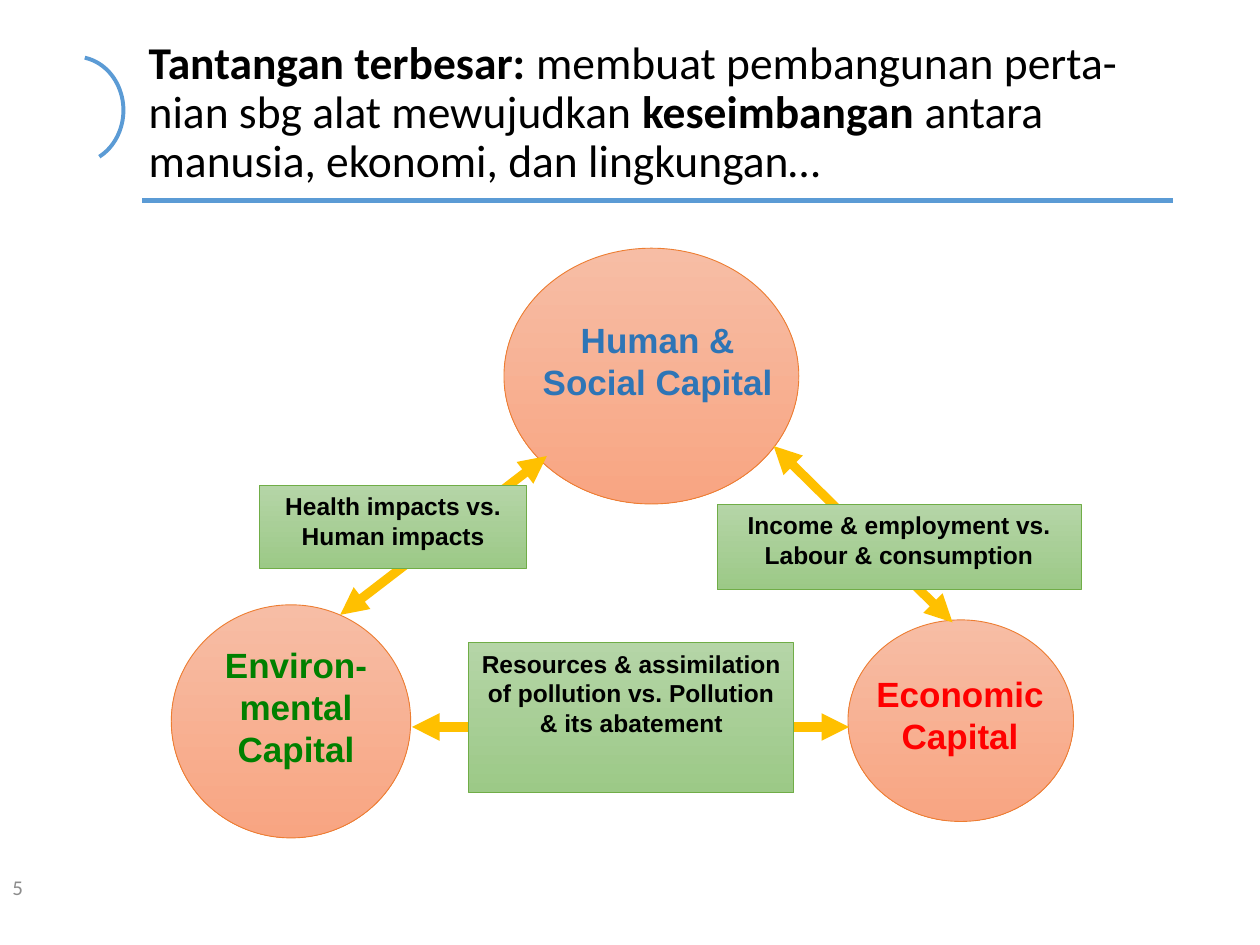
from typing import NamedTuple

from lxml import etree
from pptx import Presentation
from pptx.dml.color import RGBColor
from pptx.enum.shapes import MSO_CONNECTOR, MSO_SHAPE
from pptx.enum.text import MSO_ANCHOR, MSO_AUTO_SIZE, PP_ALIGN
from pptx.oxml.ns import qn
from pptx.util import Inches, Pt

STRAIGHT = MSO_CONNECTOR.STRAIGHT
ARC, OVAL, RECTANGLE = MSO_SHAPE.ARC, MSO_SHAPE.OVAL, MSO_SHAPE.RECTANGLE
TOP, MIDDLE = MSO_ANCHOR.TOP, MSO_ANCHOR.MIDDLE
LEFT, CENTER = PP_ALIGN.LEFT, PP_ALIGN.CENTER
NO_AUTOFIT = MSO_AUTO_SIZE.NONE

BLACK = RGBColor(0x00, 0x00, 0x00)
GRAY = RGBColor(0x8C, 0x8C, 0x8C)
BLUE = RGBColor(0x5B, 0x9B, 0xD5)
DARK_BLUE = RGBColor(0x2E, 0x75, 0xB6)
DARK_GREEN = RGBColor(0x00, 0x80, 0x00)
RED = RGBColor(0xFF, 0x00, 0x00)
GOLD = RGBColor(0xFF, 0xC0, 0x00)
ORANGE = RGBColor(0xED, 0x7D, 0x31)
ORANGE_TOP = RGBColor(0xF7, 0xBD, 0xA5)
ORANGE_BOTTOM = RGBColor(0xF8, 0xA5, 0x82)
GREEN = RGBColor(0x70, 0xAD, 0x47)
GREEN_TOP = RGBColor(0xB5, 0xD5, 0xA7)
GREEN_BOTTOM = RGBColor(0x9C, 0xC9, 0x87)


class Box(NamedTuple):
    left: float
    top: float
    width: float
    height: float

    def lengths(self):
        return [Inches(value) for value in self]


class Capital(NamedTuple):
    circle: Box
    label: Box
    lines: list[str]
    color: RGBColor


class Impact(NamedTuple):
    box: Box
    text: str


class Link(NamedTuple):
    start: tuple[float, float]
    end: tuple[float, float]


CAPITALS = [
    Capital(Box(4, 1.97, 2.34, 2.03), Box(4.04, 2.48, 2.36, 1.16),
            ["Human &", "Social Capital"], DARK_BLUE),
    Capital(Box(1.36, 4.8, 1.9, 1.85), Box(1.45, 5.06, 1.8, 1.27),
            ["Environ-mental", "Capital"], DARK_GREEN),
    Capital(Box(6.73, 4.92, 1.79, 1.6), Box(6.72, 5.29, 1.8, 0.96),
            ["Economic Capital"], RED),
]
LINKS = [
    Link((2.7, 4.88), (4.34, 3.62)),
    Link((6.14, 3.54), (7.56, 4.94)),
    Link((3.27, 5.77), (6.74, 5.77)),
]
IMPACTS = [
    Impact(Box(2.06, 3.85, 2.12, 0.66), "Health impacts vs. Human impacts"),
    Impact(Box(5.69, 4, 2.89, 0.68), "Income & employment vs. Labour & consumption"),
    Impact(Box(3.72, 5.1, 2.58, 1.19),
           "Resources & assimilation of pollution vs. Pollution & its abatement"),
]
TITLE_RUNS = [
    ("Tantangan terbesar: ", True),
    ("membuat pembangunan perta-nian sbg alat mewujudkan ", False),
    ("keseimbangan ", True),
    ("antara manusia, ekonomi, dan lingkungan…", False),
]


def write_lines(shape, lines: list[str], size: float, color: RGBColor,
                font: str = "Arial", bold: bool = True, align=CENTER, anchor=TOP):
    frame = shape.text_frame
    frame.word_wrap = True
    frame.vertical_anchor = anchor
    frame.text = "\n".join(lines)
    for paragraph in frame.paragraphs:
        paragraph.alignment = align
        paragraph.font.name = font
        paragraph.font.size = Pt(size)
        paragraph.font.bold = bold
        paragraph.font.color.rgb = color


def add_gradient_shape(slide, kind, box: Box, top: RGBColor, bottom: RGBColor,
                       outline: RGBColor):
    shape = slide.shapes.add_shape(kind, *box.lengths())
    shape.shadow.inherit = False
    shape.fill.gradient()
    shape.fill.gradient_angle = 270
    for stop, color in zip(shape.fill.gradient_stops, (top, bottom)):
        stop.color.rgb = color
    shape.line.color.rgb = outline
    shape.line.width = Pt(0.5)
    return shape


def add_line(slide, link: Link, color: RGBColor, width: float, arrows: bool = False):
    points = [Inches(value) for value in link.start + link.end]
    connector = slide.shapes.add_connector(STRAIGHT, *points)
    connector.line.color.rgb = color
    connector.line.width = Pt(width)
    if arrows:
        line = connector.line._get_or_add_ln()
        for end in ("a:headEnd", "a:tailEnd"):
            etree.SubElement(line, qn(end), type="triangle")
    etree.SubElement(connector._element.spPr, qn("a:effectLst"))


def add_title(slide):
    title = slide.shapes.title
    title.left, title.top, title.width, title.height = Box(1.08, 0.43, 8.5, 0.94).lengths()
    frame = title.text_frame
    frame.word_wrap = True
    frame.auto_size = NO_AUTOFIT
    frame.vertical_anchor = MIDDLE
    paragraph = frame.paragraphs[0]
    paragraph.alignment = LEFT
    paragraph.line_spacing = 0.9
    paragraph.font.name = "Calibri"
    paragraph.font.size = Pt(26)
    paragraph.font.color.rgb = BLACK
    for text, bold in TITLE_RUNS:
        run = paragraph.add_run()
        run.text = text
        run.font.bold = bold


def main():
    presentation = Presentation()
    presentation.slide_width = Inches(10)
    presentation.slide_height = Inches(7.5)
    slide = presentation.slides.add_slide(presentation.slide_layouts[5])

    # Title with its arc and rule
    arc = slide.shapes.add_shape(ARC, *Box(0.22, 0.45, 0.76, 0.85).lengths())
    arc.adjustments[0] = 167.99
    arc.adjustments[1] = 37.74
    arc.shadow.inherit = False
    arc.fill.background()
    arc.line.color.rgb = BLUE
    arc.line.width = Pt(2.25)
    add_line(slide, Link((1.13, 1.59), (9.31, 1.59)), BLUE, 3)
    add_title(slide)

    # Three capitals
    for capital in CAPITALS:
        add_gradient_shape(slide, OVAL, capital.circle, ORANGE_TOP, ORANGE_BOTTOM, ORANGE)
        label = slide.shapes.add_textbox(*capital.label.lengths())
        write_lines(label, capital.lines, 20, capital.color)

    # Two-way links, partly covered by the impact boxes
    for link in LINKS:
        add_line(slide, link, GOLD, 5.25, arrows=True)
    for impact in IMPACTS:
        shape = add_gradient_shape(slide, RECTANGLE, impact.box,
                                   GREEN_TOP, GREEN_BOTTOM, GREEN)
        shape.text_frame.margin_left = shape.text_frame.margin_right = Inches(0.08)
        write_lines(shape, [impact.text], 14, BLACK)

    # Slide number
    number = slide.shapes.add_textbox(*Box(0, 6.84, 2.25, 0.4).lengths())
    write_lines(number, ["5"], 12, GRAY, "Calibri", False, LEFT, MIDDLE)

    presentation.save("out.pptx")


if __name__ == "__main__":
    main()
